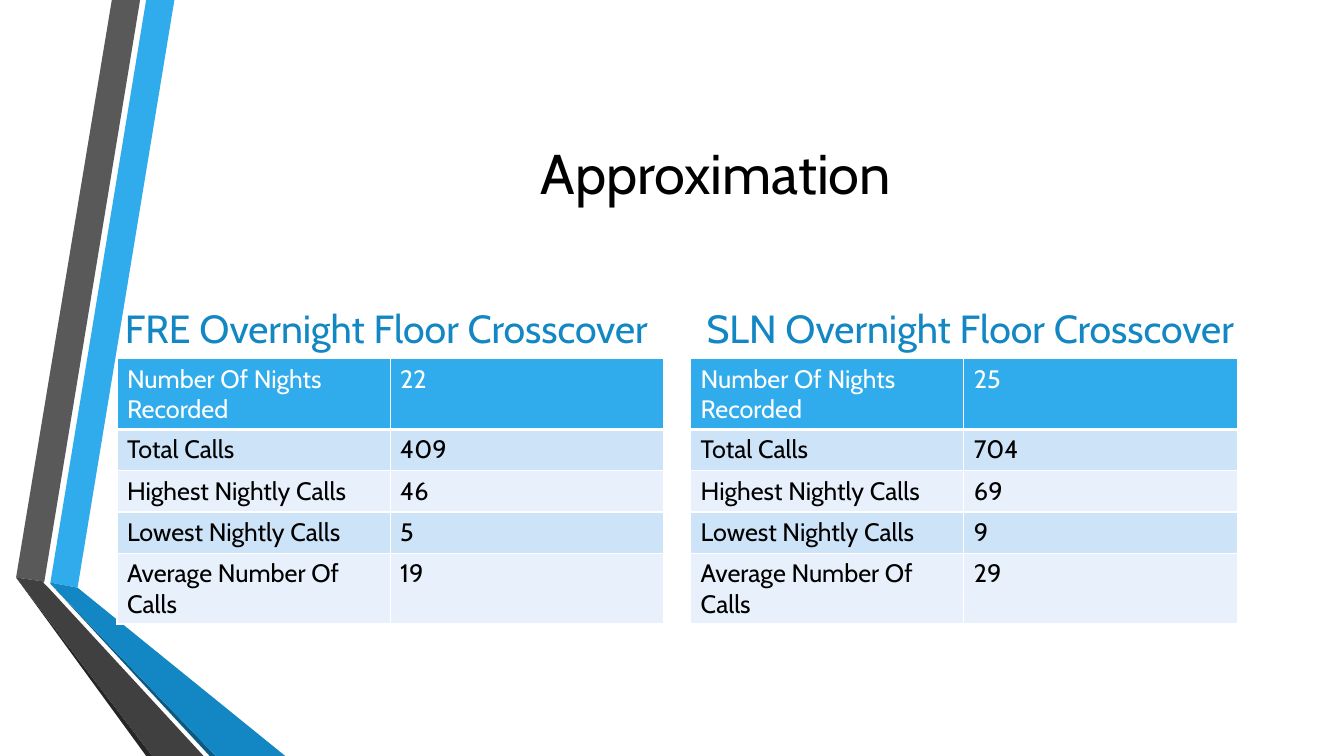
from lxml import etree
from pptx import Presentation
from pptx.dml.color import RGBColor
from pptx.enum.text import MSO_ANCHOR, PP_ALIGN
from pptx.oxml.ns import qn
from pptx.util import Pt

PX = 9144
FONT = "Cabin"
CENTER, LEFT = PP_ALIGN.CENTER, PP_ALIGN.LEFT
MIDDLE, BOTTOM = MSO_ANCHOR.MIDDLE, MSO_ANCHOR.BOTTOM

BLACK = RGBColor(0x00, 0x00, 0x00)
WHITE = RGBColor(0xFF, 0xFF, 0xFF)
SKY = RGBColor(0x30, 0xAC, 0xEC)
BLUE = RGBColor(0x12, 0x87, 0xC3)
NAVY = RGBColor(0x0C, 0x5A, 0x82)
GRAY = RGBColor(0x59, 0x59, 0x59)
DARK_GRAY = RGBColor(0x40, 0x40, 0x40)
CHARCOAL = RGBColor(0x26, 0x26, 0x26)
BAND = RGBColor(0xCD, 0xE3, 0xF8)
PALE_BAND = RGBColor(0xE8, 0xF1, 0xFB)

RIBBONS = [
    (SKY, [(50, 578), (77, 583), (173, 0), (145, 0)]),
    (GRAY, [(139, 0), (111, 0), (16, 573), (44, 577)]),
    (CHARCOAL, [(16, 573), (145, 750), (151, 750)]),
    (NAVY, [(50, 579), (208, 750), (214, 750)]),
    (BLUE, [(50, 579), (214, 750), (283, 750), (77, 583), (50, 578)]),
    (DARK_GRAY, [(202, 750), (48, 583), (43, 578), (44, 577), (16, 573), (151, 750)]),
]
MEASURES = ["Number Of Nights Recorded", "Total Calls", "Highest Nightly Calls",
            "Lowest Nightly Calls", "Average Number Of Calls"]
FLOORS = [
    ("FRE Overnight Floor Crosscover", 114, 116, [22, 409, 46, 5, 19]),
    ("SLN Overnight Floor Crosscover", 691, 685, [25, 704, 69, 9, 29]),
]


class SlideBuilder:
    def __init__(self, slide):
        self.shapes = slide.shapes

    def style(self, paragraph, size, color):
        font = paragraph.font
        font.name, font.size, font.bold = FONT, Pt(size), False
        font.color.rgb = color

    def ribbon(self, color, points):
        outline = self.shapes.build_freeform(*points[0], scale=PX)
        outline.add_line_segments(points[1:], close=True)
        ribbon = outline.convert_to_shape()
        ribbon.shadow.inherit = False
        ribbon.fill.solid()
        ribbon.fill.fore_color.rgb = color
        ribbon.line.fill.background()

    def text(self, words, box, size, color, align, anchor, after=0):
        frame = self.shapes.add_textbox(*(n * PX for n in box)).text_frame
        frame.word_wrap = True
        frame.vertical_anchor = anchor
        paragraph = frame.paragraphs[0]
        paragraph.text = words
        paragraph.alignment = align
        paragraph.space_after = Pt(after)
        self.style(paragraph, size, color)

    def borders(self, cell, bottom):
        properties = cell._tc.get_or_add_tcPr()
        for side, width in (("L", 1), ("R", 1), ("T", 1), ("B", bottom)):
            line = etree.SubElement(properties, qn(f"a:ln{side}"), w=str(Pt(width)))
            fill = etree.SubElement(line, qn("a:solidFill"))
            etree.SubElement(fill, qn("a:srgbClr"), val=str(WHITE))

    def table(self, rows, left, top, column_width, row_height):
        count = len(rows[0])
        table = self.shapes.add_table(
            len(rows), count, left * PX, top * PX,
            count * column_width * PX, len(rows) * row_height * PX).table
        for r, row in enumerate(rows):
            header = r == 0
            band = SKY if header else BAND if r % 2 else PALE_BAND
            for c, value in enumerate(row):
                cell = table.cell(r, c)
                cell.text = str(value)
                self.style(cell.text_frame.paragraphs[0], 18, WHITE if header else BLACK)
                self.borders(cell, 3 if header else 1)
                cell.fill.solid()
                cell.fill.fore_color.rgb = band


def main():
    deck = Presentation()
    deck.slide_width, deck.slide_height = 1333 * PX, 750 * PX
    builder = SlideBuilder(deck.slides.add_slide(deck.slide_layouts[6]))
    for color, points in RIBBONS:
        builder.ribbon(color, points)
    builder.text("Approximation", (162, 75, 1096, 192), 40, BLACK, CENTER, MIDDLE)
    for heading, heading_left, table_left, values in FLOORS:
        builder.text(heading, (heading_left, 264, 559, 90), 28, BLUE, LEFT, BOTTOM, after=6)
        builder.table(list(zip(MEASURES, values)), table_left, 356, 271, 41)
    deck.save("out.pptx")


if __name__ == "__main__":
    main()
